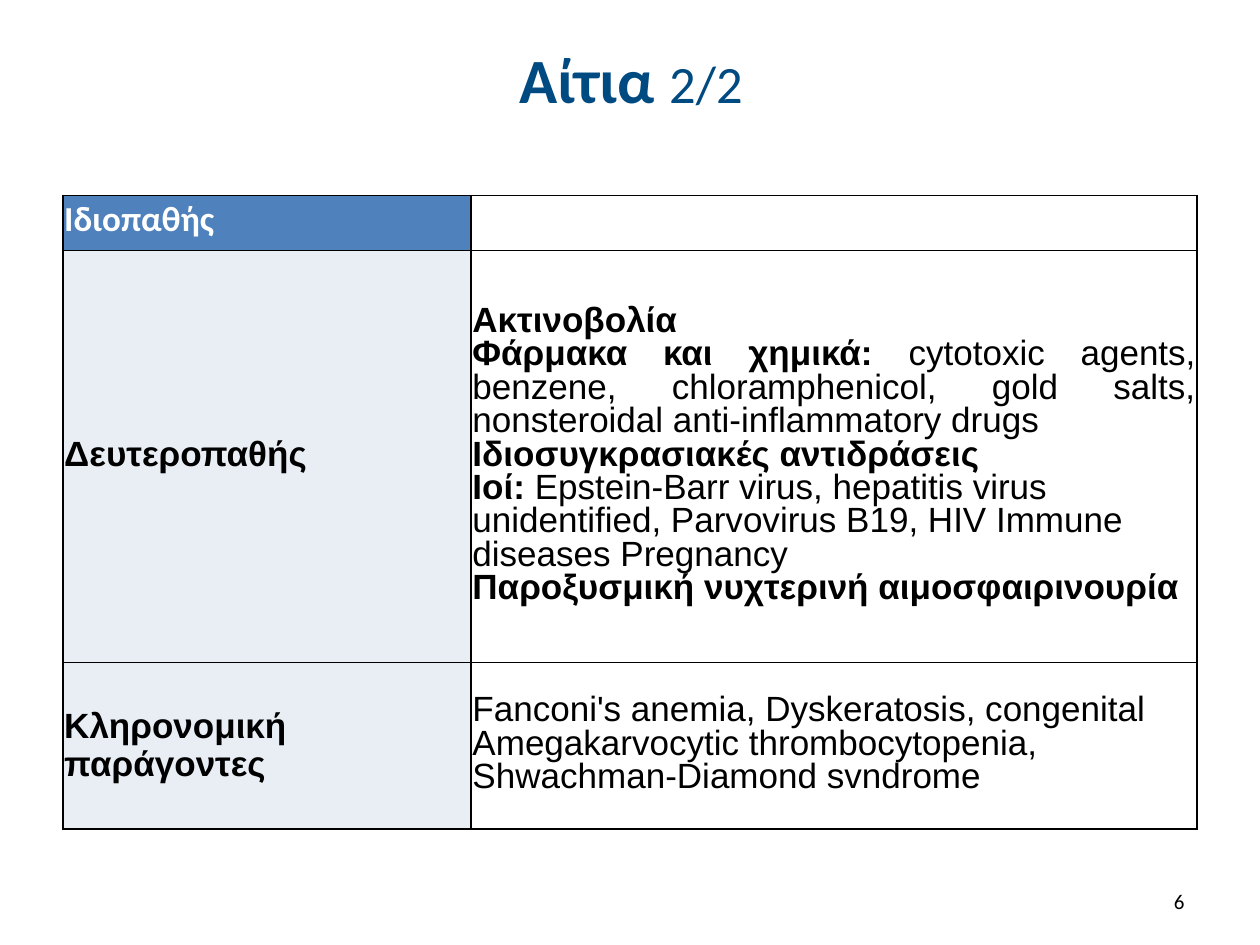
from lxml import etree
from pptx import Presentation
from pptx import util as u
from pptx.dml.color import RGBColor
from pptx.enum import text
from pptx.oxml import ns

COLORS = {
    "title": "004A82",
    "header": "4F81BD",
    "label": "E9EDF4",
    "white": "FFFFFF",
    "black": "000000",
}
LEFT, JUSTIFY = text.PP_ALIGN.LEFT, text.PP_ALIGN.JUSTIFY

# Each paragraph: alignment, bold lead, regular continuation
SECONDARY_CAUSES = [
    (JUSTIFY, "Ακτινοβολία", ""),
    (JUSTIFY, "Φάρμακα και χημικά: ",
     "cytotoxic agents, benzene, chloramphenicol, gold salts, "
     "nonsteroidal anti-inflammatory drugs"),
    (JUSTIFY, "Ιδιοσυγκρασιακές αντιδράσεις", ""),
    (LEFT, "Ιοί: ",
     "Epstein-Barr virus, hepatitis virus unidentified, Parvovirus B19, "
     "HIV Immune diseases Pregnancy"),
    (JUSTIFY, "Παροξυσμική νυχτερινή αιμοσφαιρινουρία", ""),
]
HEREDITARY_CAUSES = [
    (LEFT, "", "Fanconi's anemia, Dyskeratosis, congenital Amegakarvocytic "
               "thrombocytopenia, Shwachman-Diamond svndrome"),
]

# Each row: height, label, label line spacing, causes
ROWS = [
    (0.44, "Ιδιοπαθής", 20, []),
    (3.27, "Δευτεροπαθής", 20, SECONDARY_CAUSES),
    (1.32, "Κληρονομική παράγοντες", 22, HEREDITARY_CAUSES),
]
COLUMN_WIDTHS = (3.24, 5.76)


def rgb(name):
    return RGBColor.from_string(COLORS[name])


def style_font(font, name, size, color):
    font.name = name
    font.size = u.Pt(size)
    font.color.rgb = rgb(color)


def add_run(paragraph, words, bold):
    run = paragraph.add_run()
    run.text = words
    run.font.bold = bold
    return run


def add_borders(cell):
    properties = cell._tc.get_or_add_tcPr()
    for side in ("a:lnL", "a:lnR", "a:lnT", "a:lnB"):
        line = etree.SubElement(properties, ns.qn(side), w=str(u.Pt(1)))
        fill = etree.SubElement(line, ns.qn("a:solidFill"))
        etree.SubElement(fill, ns.qn("a:srgbClr"), val=COLORS["black"])


def format_cell(cell, fill=None):
    add_borders(cell)
    cell.margin_left = cell.margin_right = u.Inches(0.01)
    cell.margin_top = cell.margin_bottom = 0
    cell.vertical_anchor = text.MSO_ANCHOR.MIDDLE
    if fill:
        cell.fill.solid()
        cell.fill.fore_color.rgb = rgb(fill)
    else:
        cell.fill.background()


def fill_cell(cell, paragraphs, spacing, font_name="Arial", color="black"):
    frame = cell.text_frame
    for index, (alignment, lead, continuation) in enumerate(paragraphs):
        paragraph = frame.add_paragraph() if index else frame.paragraphs[0]
        paragraph.alignment = alignment
        paragraph.line_spacing = u.Pt(spacing)
        for words, bold in ((lead, True), (continuation, False)):
            if words:
                run = add_run(paragraph, words, bold)
                style_font(run.font, font_name, 20, color)


def place_title(slide, left, top, width, height):
    title = slide.shapes.title
    title.left, title.top, title.width, title.height = left, top, width, height
    title.text_frame.vertical_anchor = text.MSO_ANCHOR.MIDDLE
    paragraph = title.text_frame.paragraphs[0]
    paragraph.alignment = text.PP_ALIGN.CENTER
    for words, size, bold in (("Αίτια ", 36, True), ("2/2", 30, False)):
        run = add_run(paragraph, words, bold)
        style_font(run.font, "Calibri", size, "title")


def place_causes_table(slide, left, top, width, height):
    table = slide.shapes.add_table(
        len(ROWS), len(COLUMN_WIDTHS), left, top, width, height).table
    table.first_row = table.horz_banding = False
    for column, column_width in zip(table.columns, COLUMN_WIDTHS):
        column.width = u.Inches(column_width)

    for index, (row_height, label, spacing, causes) in enumerate(ROWS):
        table.rows[index].height = u.Inches(row_height)
        label_cell, causes_cell = table.cell(index, 0), table.cell(index, 1)
        is_header = index == 0
        format_cell(label_cell, "header" if is_header else "label")
        format_cell(causes_cell)
        look = ("Calibri", "white") if is_header else ("Arial", "black")
        fill_cell(label_cell, [(LEFT, label, "")], spacing, *look)
        fill_cell(causes_cell, causes, 19.1)


def place_page_number(slide, left, top, width, height):
    frame = slide.shapes.add_textbox(left, top, width, height).text_frame
    frame.word_wrap = True
    frame.vertical_anchor = text.MSO_ANCHOR.MIDDLE
    paragraph = frame.paragraphs[0]
    paragraph.text = "6"
    paragraph.alignment = text.PP_ALIGN.RIGHT
    style_font(paragraph.font, "Calibri", 12, "black")


def main():
    deck = Presentation()
    deck.slide_width, deck.slide_height = u.Inches(10), u.Inches(7.5)
    slide = deck.slides.add_slide(deck.slide_layouts[5])
    place_title(slide, u.Inches(0.51), u.Inches(0.13), u.Inches(9), u.Inches(0.99))
    place_causes_table(
        slide, u.Inches(0.5), u.Inches(1.55), u.Inches(9), u.Inches(5.04))
    place_page_number(
        slide, u.Inches(7.17), u.Inches(6.95), u.Inches(2.33), u.Inches(0.4))
    deck.save("out.pptx")


if __name__ == "__main__":
    main()
